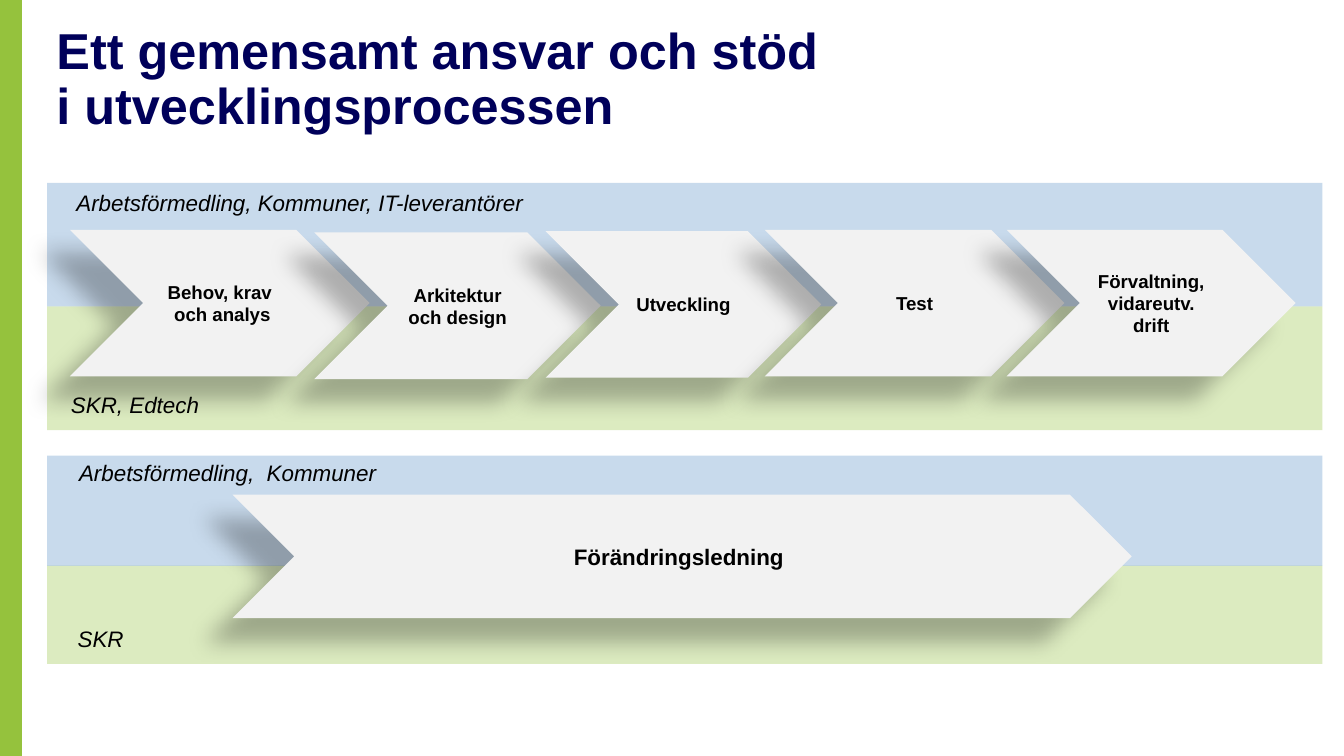
from lxml import etree
from pptx import Presentation
from pptx.dml.color import RGBColor
from pptx.enum.shapes import MSO_SHAPE
from pptx.enum.text import MSO_ANCHOR, PP_ALIGN
from pptx.oxml.ns import qn
from pptx.util import Inches, Pt

RECTANGLE = MSO_SHAPE.RECTANGLE
CHEVRON = MSO_SHAPE.CHEVRON
MIDDLE = MSO_ANCHOR.MIDDLE
CENTER = PP_ALIGN.CENTER
GREEN, BLUE, NAVY, GRAY, BLACK = "95C23D", "568FC6", "00005A", "F2F2F2", "000000"

presentation = Presentation()
presentation.slide_width = Inches(10)
presentation.slide_height = Inches(10) * 9 // 16
slide = presentation.slides.add_slide(presentation.slide_layouts[6])


def add_filled_shape(kind, left, top, width, height, color, alpha=100):
    shape = slide.shapes.add_shape(
        kind, Inches(left), Inches(top), Inches(width), Inches(height))
    shape.shadow.inherit = False
    shape.line.fill.background()
    shape.fill.solid()
    shape.fill.fore_color.rgb = RGBColor.from_string(color)
    if alpha < 100:
        color_element = shape._element.spPr.find(qn("a:solidFill"))[0]
        etree.SubElement(color_element, qn("a:alpha"), val=str(alpha * 1000))
    return shape


def style_text(paragraph, text, size, color=BLACK, bold=False, italic=False):
    paragraph.text = text
    font = paragraph.font
    font.name = "Arial"
    font.size = Pt(size)
    font.bold = bold
    font.italic = italic
    font.color.rgb = RGBColor.from_string(color)


side_bar = add_filled_shape(RECTANGLE, 0, 0, 0.16, 5.63, GREEN)
side_bar.line.color.rgb = RGBColor.from_string(GREEN)
side_bar.line.width = Pt(1)

for top, height, color in [(4.21, 0.73, GREEN), (3.39, 0.82, BLUE),
                           (2.28, 0.92, GREEN), (1.36, 0.92, BLUE)]:
    add_filled_shape(RECTANGLE, 0.35, top, 9.49, height, color, 32)

title = slide.shapes.add_textbox(Inches(0.35), Inches(0.18), Inches(5.91), Inches(0.84))
title_frame = title.text_frame
title_frame.word_wrap = True
title_frame.vertical_anchor = MIDDLE
title_frame.margin_left = title_frame.margin_right = Inches(0.07)
title_frame.margin_top = title_frame.margin_bottom = Inches(0.04)
title_frame.paragraphs[0].line_spacing = 0.9
style_text(title_frame.paragraphs[0],
           "Ett gemensamt ansvar och stöd i utvecklingsprocessen", 27, NAVY, bold=True)

for text, left, top, width in [
        ("Arbetsförmedling, Kommuner, IT-leverantörer", 0.47, 1.36, 3.56),
        ("SKR, Edtech", 0.43, 2.86, 1.16),
        ("Arbetsförmedling,  Kommuner", 0.49, 3.37, 2.9),
        ("SKR", 0.48, 4.6, 0.56)]:
    label = slide.shapes.add_textbox(Inches(left), Inches(top), Inches(width), Inches(0.3))
    label.text_frame.word_wrap = False
    style_text(label.text_frame.paragraphs[0], text, 12, italic=True)

for text, left, top, width, height, size in [
        ("Behov, krav\v och analys", 0.52, 1.71, 2.23, 1.09, 10),
        ("Arkitektur och design", 2.34, 1.73, 2.13, 1.09, 10),
        ("Utveckling", 4.06, 1.72, 2.05, 1.09, 10),
        ("Test", 5.69, 1.71, 2.23, 1.09, 10),
        ("Förvaltning, vidareutv. drift", 7.49, 1.71, 2.15, 1.09, 10),
        ("Förändringsledning ", 1.73, 3.68, 6.69, 0.92, 12)]:
    step = add_filled_shape(CHEVRON, left, top, width, height, GRAY)
    effects = step._element.spPr.find(qn("a:effectLst"))
    shadow = etree.SubElement(
        effects, qn("a:outerShdw"), blurRad=str(Pt(11.8)), dist=str(Pt(19.7)),
        dir=str(141 * 60000), algn="ctr", rotWithShape="0")
    shadow_color = etree.SubElement(shadow, qn("a:srgbClr"), val=BLACK)
    etree.SubElement(shadow_color, qn("a:alpha"), val="28000")
    step.text_frame.word_wrap = True
    step.text_frame.vertical_anchor = MIDDLE
    paragraph = step.text_frame.paragraphs[0]
    paragraph.alignment = CENTER
    style_text(paragraph, text, size, bold=True)

presentation.save("out.pptx")
